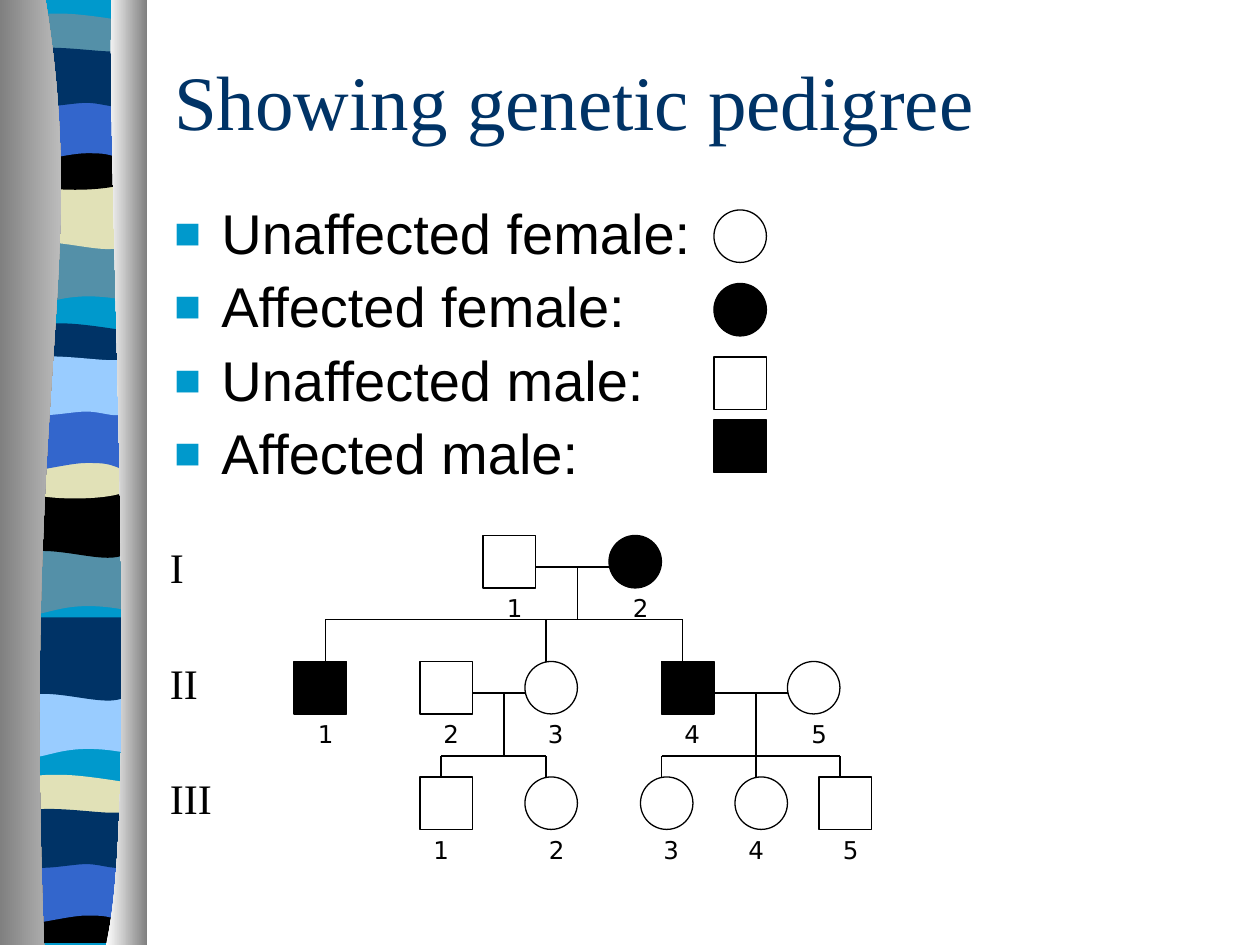
from dataclasses import dataclass

from lxml import etree
from pptx import Presentation
from pptx.dml.color import RGBColor
from pptx.enum.shapes import MSO_CONNECTOR, MSO_SHAPE
from pptx.enum.text import MSO_ANCHOR, MSO_AUTO_SIZE
from pptx.oxml.ns import qn
from pptx.util import Inches, Pt

STRAIGHT = MSO_CONNECTOR.STRAIGHT
FORMS = {"F": MSO_SHAPE.OVAL, "M": MSO_SHAPE.RECTANGLE}
TOP, MIDDLE = MSO_ANCHOR.TOP, MSO_ANCHOR.MIDDLE
FIT = MSO_AUTO_SIZE.SHAPE_TO_FIT_TEXT
COLS, ROWS, CELL = 120, 90, Inches(1) // 12
SIDE = 5


@dataclass(frozen=True)
class Theme:
    """Colours, fonts and type sizes of the slide."""
    ink: str = "000000"
    paper: str = "FFFFFF"
    navy: str = "003366"
    cyan: str = "0099CC"
    teal: str = "5490A8"
    sand: str = "E1E1B7"
    blue: str = "3366CC"
    sky: str = "99CCFF"
    dark: str = "808080"
    light: str = "DADADA"
    serif: str = "Times New Roman"
    sans: str = "Arial"
    label: str = "DejaVu Sans"
    head: int = 44
    body: int = 32
    mark: int = 24
    small: int = 14
    line: float = 0.75


T = Theme()

WAVES = {
    "slab": [(1, 0), (1, 90), (0, 90), (0, 0)],
    "sag": [(1, 0), (1, 7.5), (.31, 6.2, .17, 8.8, 0, 7.5), (0, 0)],
    "swell": [(1, 0), (1, 7.5), (.83, 8.8, .31, 6.6, 0, 7.5), (0, 0)],
    "lens": [(1, .8), (1, 4.7), (.83, 5.4, .17, 5.4, 0, 4.7), (0, .8),
             (.06, 0, .22, .1, .38, .1), (.55, .1, .87, .6, 1, .8)],
    "bowl": [(1, 0), (1, 5.2), (.83, 6.1, .17, 6.1, 0, 5.2), (0, 0),
             (.61, .8, .79, 0, 1, 0)],
    "floor": [(1, 0), (1, 5.2), (0, 5.2), (0, 0), (.61, .8, .79, 0, 1, 0)],
    "arch": [(1, 0), (1, 7.5), (.84, 6.7, .78, 6.7, .61, 6.7),
             (.45, 6.7, .15, 7.5, 0, 7.5), (0, 0)],
    "ripple": [(1, .8), (1, 5.7), (.93, 6.5, .78, 5.7, .61, 5.7),
               (.45, 5.7, .11, 6.5, 0, 5.7), (0, .8),
               (.14, 0, .68, .8, .84, .8)],
}
BANDS = [
    ("slab", 0, T.cyan),
    ("sag", 21.1, T.teal), ("swell", 15.8, T.sand), ("lens", 1.2, T.teal),
    ("bowl", 12.2, T.ink), ("arch", 7.9, T.blue), ("ripple", 4.1, T.navy),
    ("sag", 50.6, T.teal), ("swell", 45.2, T.ink), ("lens", 30.7, T.navy),
    ("bowl", 41.6, T.sand), ("arch", 37.4, T.blue), ("ripple", 33.5, T.sky),
    ("sag", 64.2, T.sky), ("swell", 58.8, T.navy), ("lens", 73.7, T.sand),
    ("floor", 84.6, T.ink), ("arch", 80.5, T.blue), ("ripple", 76.6, T.navy),
]
POSTS = [
    ([(.31, 0), (.61, 25.9, .15, 35.5, .3, 90), (0, 90), (0, 0)], T.dark, T.light),
    ([(.76, 0), (.72, 15, .96, 77.5, .72, 90), (1, 90), (1, 0)], T.paper, T.dark),
]
KEY = [("Unaffected female:", "F", False, 1), ("Affected female:", "F", True, 8),
       ("Unaffected male:", "M", False, 15), ("Affected male:", "M", True, 21)]
TREE = [
    ("I", 0, [("M", 31, False, 1.1), ("F", 43, True, 1.1)]),
    ("II", 12, [("M", 13, True, 1.1), ("M", 25, False, 1.05), ("F", 35, False, 1),
                ("M", 48, True, 1), ("F", 60, False, 1.1)]),
    ("III", 23, [("M", 25, False, .1), ("F", 35, False, 1.1), ("F", 46, False, 1),
                 ("F", 55, False, .1), ("M", 63, False, 1.1)]),
]
KIN = [(36, 43, 3, 40, 8, 12, (16, 37, 50)),
       (30, 35, 15, 33, 21, 23, (27, 37)),
       (53, 60, 15, 57, 21, 23, (48, 57, 65))]


def grid(*cells):
    """Turn grid counts into slide lengths."""
    return [round(n * CELL) for n in cells]


def outline(slide, box, parts):
    """Build a closed shape of corners and cubic curves."""
    left, top, width, _ = box
    nodes = [grid(left + part[i] * width, top + part[i + 1])
             for part in parts for i in range(0, len(part), 2)]
    pen = slide.shapes.build_freeform(*nodes[0])
    pen.add_line_segments(nodes[1:], close=True)
    shape = pen.convert_to_shape()
    legs = iter(list(shape._element.iter(qn("a:lnTo"))))
    for part in parts[1:]:
        leg = next(legs)
        if len(part) == 6:
            curve = etree.Element(qn("a:cubicBezTo"))
            leg.addprevious(curve)
            for piece in (leg, next(legs), next(legs)):
                curve.append(piece[0])
                piece.getparent().remove(piece)
    shape.shadow.inherit = False
    shape.line.fill.background()
    return shape


def write(slide, box, text, face, size, tint=T.ink, anchor=TOP, wrap=True):
    """Add one line of text and return its paragraph."""
    shape = slide.shapes.add_textbox(*grid(*box))
    frame = shape.text_frame
    frame.text = text
    frame.word_wrap = wrap
    frame.vertical_anchor = anchor
    if not wrap:
        frame.auto_size = FIT
    font = frame.paragraphs[0].runs[0].font
    font.name, font.size = face, Pt(size)
    font.color.rgb = RGBColor.from_string(tint)
    return frame.paragraphs[0]


def bullet(line):
    """Give a paragraph a square bullet and a hanging indent."""
    line.line_spacing = 0.9
    props = line._p.get_or_add_pPr()
    inset = round(4.5 * CELL)
    props.set("marL", str(inset))
    props.set("indent", str(-inset))
    tint = etree.SubElement(props, qn("a:buClr"))
    etree.SubElement(tint, qn("a:srgbClr"), val=T.cyan)
    etree.SubElement(props, qn("a:buSzPct"), val="80000")
    etree.SubElement(props, qn("a:buFont"), typeface=T.sans)
    etree.SubElement(props, qn("a:buChar"), char="■")


def person(slide, left, top, sex, ill):
    """Draw a circle or square, filled when affected."""
    shape = slide.shapes.add_shape(FORMS[sex], *grid(left, top, SIDE, SIDE))
    shape.shadow.inherit = False
    shape.line.color.rgb = RGBColor.from_string(T.ink)
    shape.line.width = Pt(T.line)
    if sex == "M" and not ill:
        shape.fill.background()
    else:
        shape.fill.solid()
        shape.fill.fore_color.rgb = RGBColor.from_string(T.ink if ill else T.paper)


def link(slide, *ends):
    """Draw a thin straight line."""
    wire = slide.shapes.add_connector(STRAIGHT, *grid(*ends))
    wire.line.color.rgb = RGBColor.from_string(T.ink)
    wire.line.width = Pt(T.line)
    etree.SubElement(wire._element.spPr, qn("a:effectLst"))


def ribbon(slide, box):
    """Draw the wavy side strip between two shaded posts."""
    left, top, width, height = box
    for kind, row, tint in BANDS:
        band = outline(slide, (left + 2.3, top + row, width - 4.3, height), WAVES[kind])
        band.fill.solid()
        band.fill.fore_color.rgb = RGBColor.from_string(tint)
    for parts, *tints in POSTS:
        post = outline(slide, box, parts)
        post.fill.gradient()
        post.fill.gradient_angle = 0
        for stop, tint in zip(post.fill.gradient_stops, tints):
            stop.color.rgb = RGBColor.from_string(tint)


def legend(slide, box):
    """List the four symbols with their meaning."""
    left, top, width, height = box
    step = height / len(KEY)
    for i, (text, sex, ill, row) in enumerate(KEY):
        bullet(write(slide, (left + .4, top + i * step, width - 5.5, step),
                     text, T.sans, T.body))
        person(slide, left + width - SIDE, top + row, sex, ill)


def family(slide, box):
    """Draw three generations and the lines that join them."""
    left, top = box[:2]
    for i, (name, row, people) in enumerate(TREE):
        for number, (sex, col, ill, shift) in enumerate(people, 1):
            person(slide, left + col, top + row, sex, ill)
            write(slide, (left + col + shift, top + row + 4.9, 3.9, 4.1),
                  str(number), T.label, T.small, wrap=False)
        write(slide, (left, top + 11 * i, 3.9 + 1.4 * i, 6),
              name, T.serif, T.mark, wrap=False)
    for start, end, bond, stem, bar, foot, kids in KIN:
        link(slide, left + start, top + bond, left + end, top + bond)
        link(slide, left + stem, top + bond, left + stem, top + bar)
        link(slide, left + kids[0], top + bar, left + kids[-1], top + bar)
        for kid in kids:
            link(slide, left + kid, top + bar, left + kid, top + foot)


def main():
    """Build the slide and save it."""
    deck = Presentation()
    deck.slide_width, deck.slide_height = grid(COLS, ROWS)
    slide = deck.slides.add_slide(deck.slide_layouts[6])
    ribbon(slide, (0, 0, 14, ROWS))
    write(slide, (15.4, 2, 102, 15), "Showing genetic pedigree",
          T.serif, T.head, T.navy, MIDDLE)
    legend(slide, (15, 19, 58, 28))
    family(slide, (15, 51, 68, 32))
    deck.save("out.pptx")


if __name__ == "__main__":
    main()
